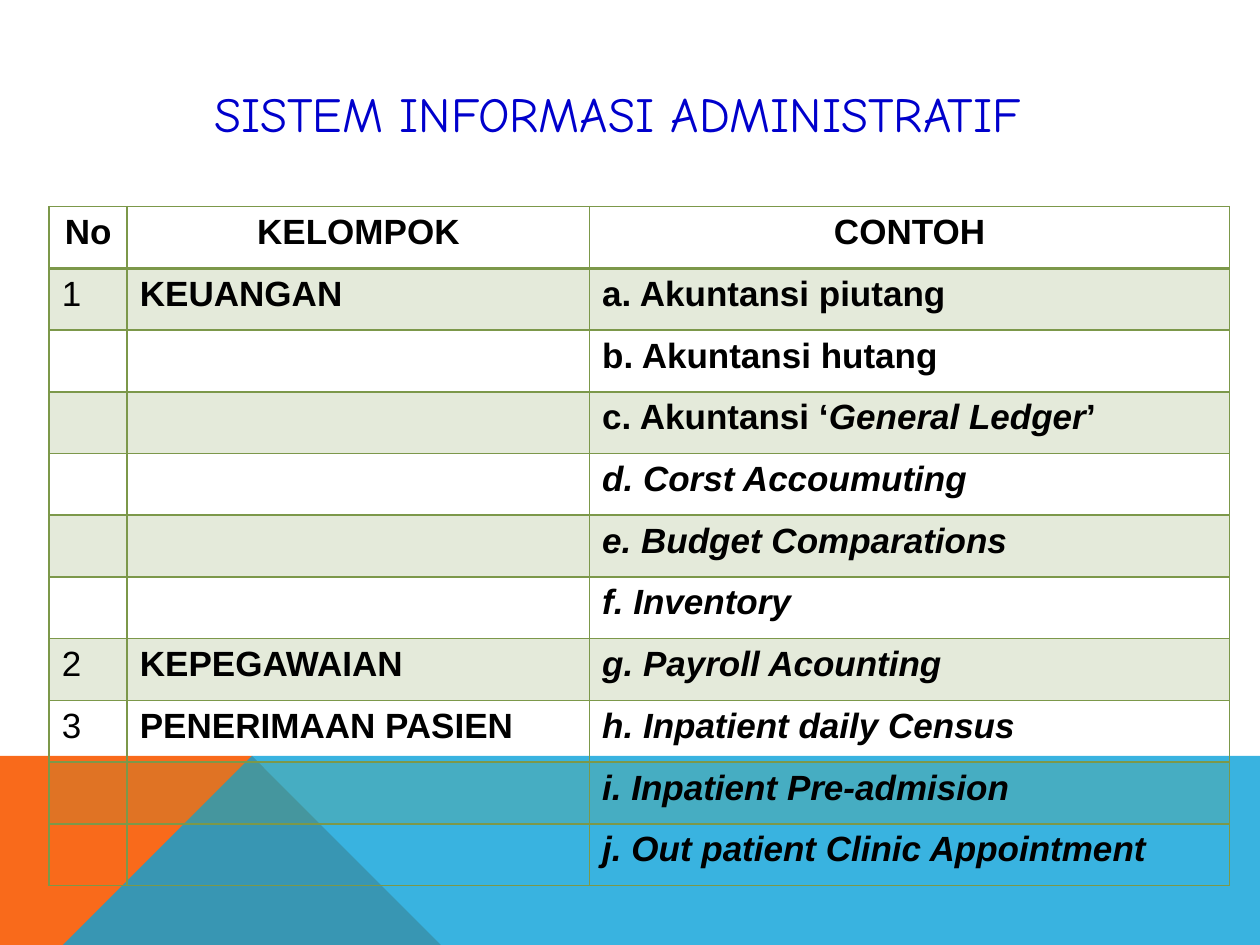
import pptx
import pptx.dml.color
import pptx.enum.text
import pptx.oxml
import pptx.oxml.ns
import pptx.util
from lxml import etree

Inches, Pt = pptx.util.Inches, pptx.util.Pt
ALIGN = pptx.enum.text.PP_ALIGN
ANCHOR = pptx.enum.text.MSO_ANCHOR

COLORS = {"orange": "F96A1B", "blue": "08A1D9", "title": "0000CC",
          "green": "7C984A", "text": "000000"}

# Content: an example is a list of (text, italic) runs
TITLE = "SISTEM INFORMASI ADMINISTRATIF"
HEADERS = ("No", "KELOMPOK", "CONTOH")
GROUPS = [
    ("1", "KEUANGAN", [
        [("a. Akuntansi piutang", False)],
        [("b. Akuntansi hutang", False)],
        [("c. Akuntansi ‘", False), ("General Ledger", True), ("’", False)],
        [("d. Corst Accoumuting", True)],
        [("e. Budget Comparations", True)],
        [("f. Inventory", True)],
    ]),
    ("2", "KEPEGAWAIAN", [[("g. Payroll Acounting", True)]]),
    ("3", "PENERIMAAN PASIEN", [
        [("h. Inpatient daily Census", True)],
        [("i. Inpatient Pre-admision", True)],
        [("j. Out patient Clinic Appointment", True)],
    ]),
]

# Layout in inches
WIDTH, HEIGHT = 10, 7.5
BAND_TOP, PEAK_X, ORANGE_END = 5.52, 2.23, 3.91
TABLE_LEFT, TABLE_TOP, ROW_HEIGHT = 0.39, 1.64, 0.49
COLUMN_WIDTHS = (0.62, 3.67, 5.08)


def rgb(name):
    return pptx.dml.color.RGBColor.from_string(COLORS[name])


def paint(fill, color, opacity=100):
    fill.solid()
    fill.fore_color.rgb = rgb(color)
    if opacity < 100:
        for node in fill._xPr.iter(pptx.oxml.ns.qn("a:srgbClr")):
            etree.SubElement(node, pptx.oxml.ns.qn("a:alpha"), val=str(opacity * 1000))


def add_polygon(slide, points, color, opacity=100):
    builder = slide.shapes.build_freeform(*points[0], scale=Inches(1))
    builder.add_line_segments(points[1:], close=True)
    shape = builder.convert_to_shape()
    shape.shadow.inherit = False
    shape.line.fill.background()
    paint(shape.fill, color, opacity)


def set_borders(cell, bottom_width):
    properties = cell._tc.get_or_add_tcPr()
    for side, width in (("L", 1), ("R", 1), ("T", 1), ("B", bottom_width)):
        properties.append(pptx.oxml.parse_xml(
            f'<a:ln{side} {pptx.oxml.ns.nsdecls("a")} w="{Pt(width)}"><a:solidFill>'
            f'<a:srgbClr val="{COLORS["green"]}"/></a:solidFill></a:ln{side}>'))


def write_cell(cell, runs, bold, centered):
    paragraph = cell.text_frame.paragraphs[0]
    if centered:
        paragraph.alignment = ALIGN.CENTER
    for text, italic in runs:
        run = paragraph.add_run()
        run.text = text
        font = run.font
        font.name, font.size = "Arial", Pt(20)
        font.bold, font.italic = bold, italic
        font.color.rgb = rgb("text")


def add_title(slide):
    title = slide.shapes.title
    title.left, title.top = Inches(0.31), Inches(0.47)
    title.width, title.height = Inches(9.18), Inches(0.86)
    frame = title.text_frame
    frame.text = TITLE
    frame.vertical_anchor = ANCHOR.MIDDLE
    paragraph = frame.paragraphs[0]
    paragraph.alignment = ALIGN.CENTER
    font = paragraph.runs[0].font
    font.name, font.size = "Comic Neue", Pt(28)
    font.color.rgb = rgb("title")


def add_group_table(slide):
    # One row per example; number and group only beside the first
    rows = [[[(header, False)] for header in HEADERS]]
    for number, group, examples in GROUPS:
        for index, example in enumerate(examples):
            labels = [[(label, False)] if index == 0 else [] for label in (number, group)]
            rows.append(labels + [example])

    table = slide.shapes.add_table(
        len(rows), len(HEADERS), Inches(TABLE_LEFT), Inches(TABLE_TOP),
        Inches(sum(COLUMN_WIDTHS)), Inches(ROW_HEIGHT * len(rows))).table
    table.first_row = table.horz_banding = False
    for column, width in zip(table.columns, COLUMN_WIDTHS):
        column.width = Inches(width)

    for row_index, row in enumerate(rows):
        table.rows[row_index].height = Inches(ROW_HEIGHT)
        is_header = row_index == 0
        for column_index, runs in enumerate(row):
            cell = table.cell(row_index, column_index)
            write_cell(cell, runs, is_header or column_index > 0, is_header)
            set_borders(cell, 2 if is_header else 1)
            if row_index % 2:
                paint(cell.fill, "green", 20)
            else:
                cell.fill.background()


def main():
    presentation = pptx.Presentation()
    presentation.slide_width, presentation.slide_height = Inches(WIDTH), Inches(HEIGHT)
    slide = presentation.slides.add_slide(presentation.slide_layouts[5])

    # Coloured band at the foot
    add_polygon(slide, [(0, HEIGHT), (0, BAND_TOP), (PEAK_X, BAND_TOP),
                        (ORANGE_END, HEIGHT)], "orange")
    add_polygon(slide, [(0, HEIGHT), (PEAK_X, BAND_TOP), (WIDTH, BAND_TOP),
                        (WIDTH, HEIGHT)], "blue", 80)
    add_title(slide)
    add_group_table(slide)
    presentation.save("out.pptx")


if __name__ == "__main__":
    main()
